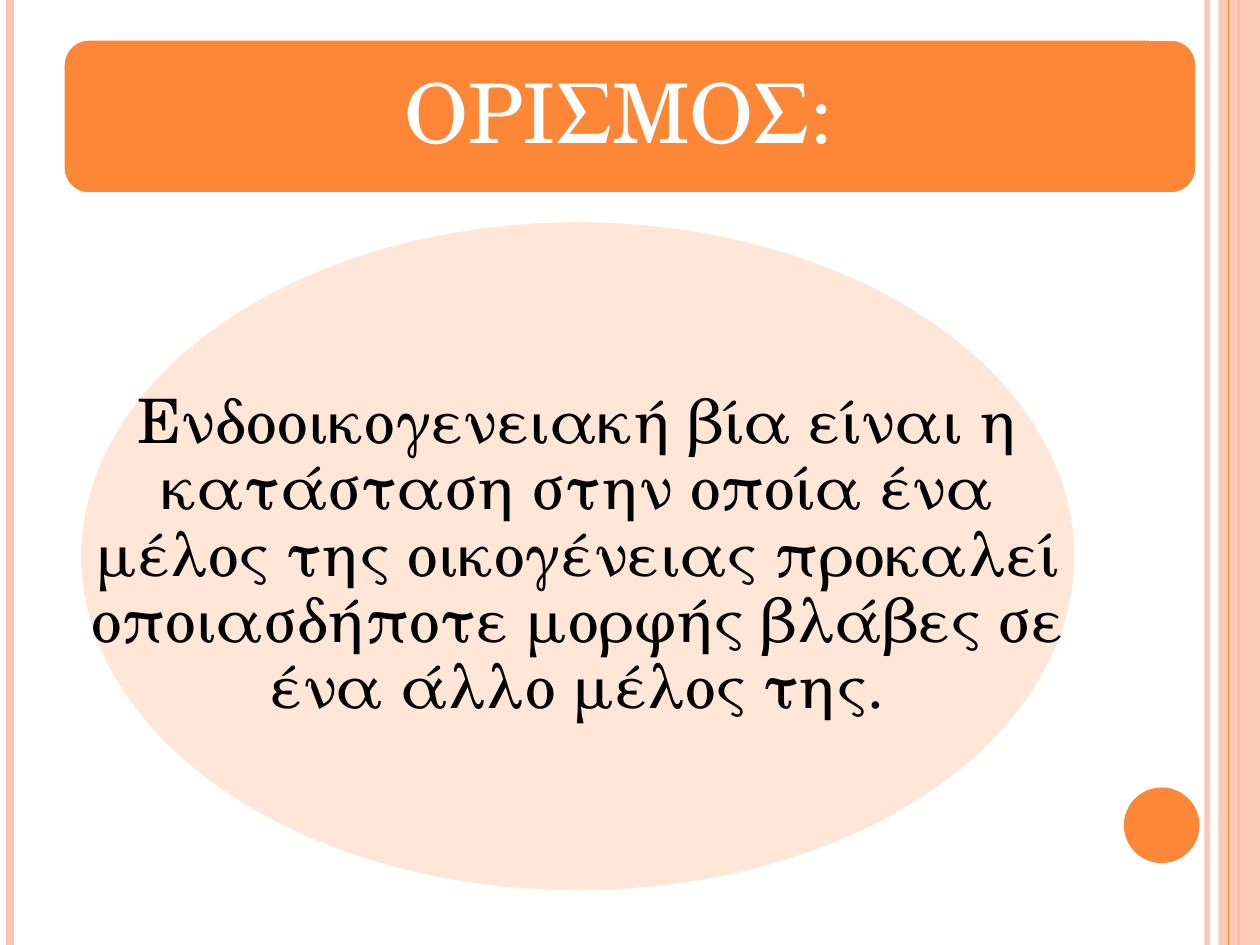
"""Builds a slide that defines domestic violence in Greek."""
from lxml.etree import SubElement
from pptx import Presentation
from pptx.dml.color import RGBColor
from pptx.enum.shapes import MSO_CONNECTOR as Link, MSO_SHAPE as Kind
from pptx.enum.text import MSO_ANCHOR as Anchor, PP_ALIGN as Align
from pptx.oxml.ns import qn
from pptx.util import Inches, Pt

FONT = "TeX Gyre Schola"
COLORS = {"orange": "FE8637", "pink": "FEC3AE", "peach": "FFCFAF",
          "white": "FFFFFF", "black": "000000"}
WIDTH, HEIGHT = 10, 7.5

RULES = [(9.58, "pink", 3, 93), (0.08, "pink", 4.5, 100),
         (9.83, "orange", 1.5, 100)]
BAND = (9.67, 0, 0.33, HEIGHT)
EDGE = (9.75, "orange", 0.75, 100)
DOT = (8.92, 6.25, 0.6, 0.6)
PANELS = [
    (Kind.ROUNDED_RECTANGLE, (0.5, 0.31, 9, 1.23), "orange", 100,
     "ΟΡΙΣΜΟΣ: ", 47, "white", 0.2),
    (Kind.OVAL, (0.63, 1.75, 7.91, 5.33), "peach", 50,
     "Ενδοοικογενειακή βία είναι η κατάσταση στην οποία ένα μέλος της "
     "οικογένειας προκαλεί οποιασδήποτε μορφής βλάβες σε ένα άλλο μέλος της.",
     35, "black", 0),
]


def rgb(name):
    return RGBColor.from_string(COLORS[name])


def fade(shape, alpha):
    if alpha < 100:
        color = next(shape.element.spPr.iter(qn("a:srgbClr")))
        SubElement(color, qn("a:alpha"), val=str(alpha * 1000))


def add_rule(slide, x, color, weight, alpha):
    rule = slide.shapes.add_connector(
        Link.STRAIGHT, Inches(x), 0, Inches(x), Inches(HEIGHT))
    rule.line.color.rgb = rgb(color)
    rule.line.width = Pt(weight)
    fade(rule, alpha)
    SubElement(rule.element.spPr, qn("a:effectLst"))


def add_form(slide, kind, box, color, alpha=100, border=False):
    form = slide.shapes.add_shape(kind, *map(Inches, box))
    form.shadow.inherit = False
    form.fill.solid()
    form.fill.fore_color.rgb = rgb(color)
    fade(form, alpha)
    if border:
        form.line.color.rgb = rgb("white")
        form.line.width = Pt(2)
    else:
        form.line.fill.background()


def add_text(slide, box, text, size, color, inset):
    frame = slide.shapes.add_textbox(*map(Inches, box)).text_frame
    frame.word_wrap = True
    frame.vertical_anchor = Anchor.MIDDLE
    frame.margin_left = frame.margin_right = Inches(inset)
    frame.margin_top = frame.margin_bottom = Inches(inset)
    para = frame.paragraphs[0]
    para.text = text
    para.alignment = Align.CENTER
    para.line_spacing = 0.9
    para.font.name = FONT
    para.font.size = Pt(size)
    para.font.color.rgb = rgb(color)


def main():
    deck = Presentation()
    deck.slide_width, deck.slide_height = Inches(WIDTH), Inches(HEIGHT)
    slide = deck.slides.add_slide(deck.slide_layouts[6])
    for rule in RULES:
        add_rule(slide, *rule)
    add_form(slide, Kind.RECTANGLE, BAND, "pink", 87)
    add_rule(slide, *EDGE)
    add_form(slide, Kind.OVAL, DOT, "orange")
    for kind, box, fill, alpha, text, size, color, inset in PANELS:
        add_form(slide, kind, box, fill, alpha, border=True)
        add_text(slide, box, text, size, color, inset)
    deck.save("out.pptx")


if __name__ == "__main__":
    main()
